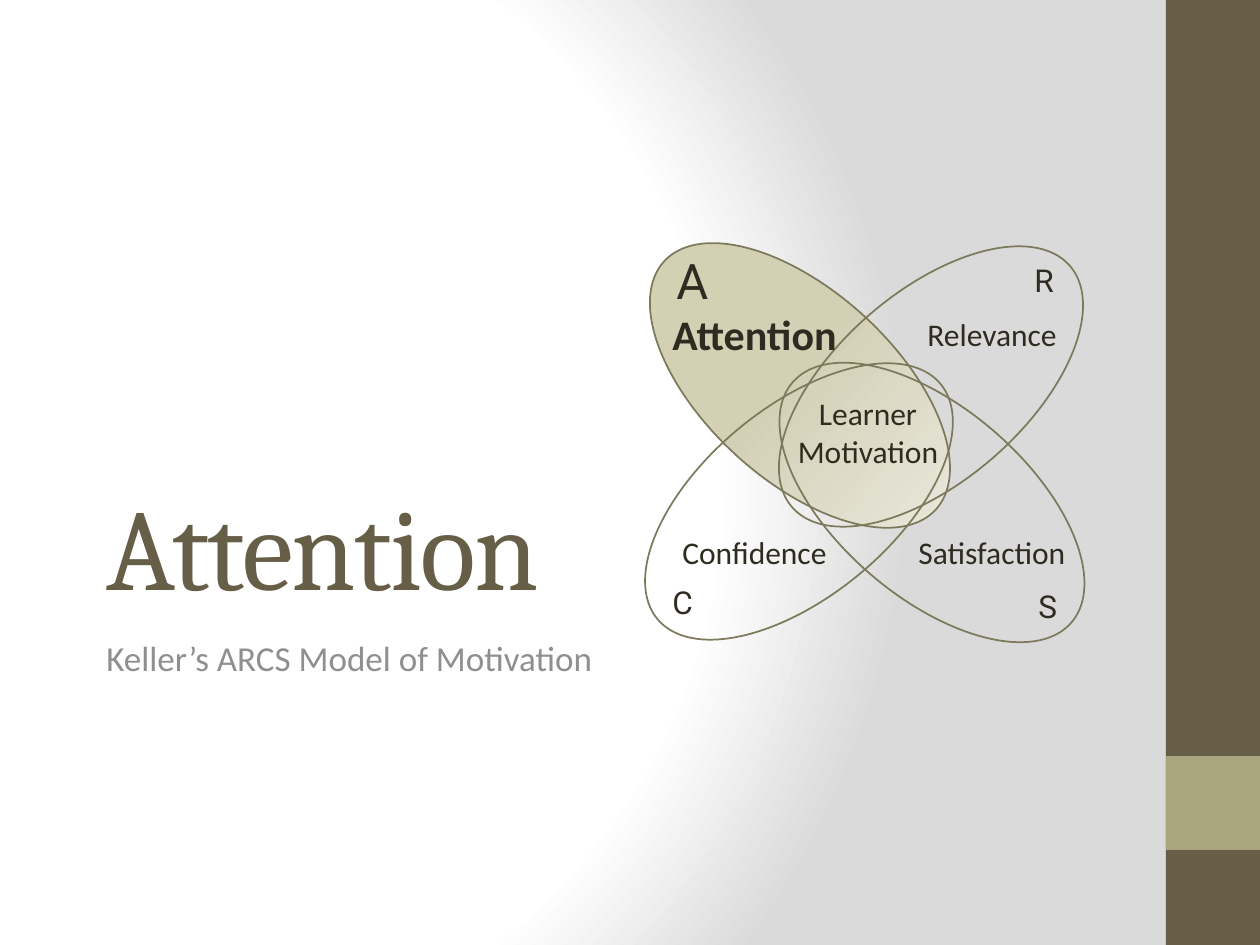
from typing import NamedTuple

from lxml.etree import SubElement
from pptx import Presentation
from pptx.dml.color import RGBColor
from pptx.enum.shapes import MSO_SHAPE
from pptx.enum.text import MSO_ANCHOR, MSO_AUTO_SIZE, PP_ALIGN
from pptx.oxml.ns import qn
from pptx.util import Emu, Pt

PX_PER_INCH = 126
BROWN, OLIVE, OUTLINE = "675E47", "A9A57C", "7D7A5C"
INK, GRAY = "2F2B20", "8F8F8D"
PETAL_WIDTH, PETAL_HEIGHT = 368, 189


class Petal(NamedTuple):
    left: int
    top: int
    rotation: float
    highlighted: bool = False


class Label(NamedTuple):
    text: str
    left: int
    top: int
    width: int
    height: int
    size: int = 18
    font: str = "Calibri"
    color: str = INK
    bold: bool = False
    align: PP_ALIGN = PP_ALIGN.LEFT
    wrap: bool = False
    anchor: MSO_ANCHOR = MSO_ANCHOR.TOP


PETALS = [
    Petal(616, 291, 42.4, highlighted=True),
    Petal(748, 408, 40.7),
    Petal(747, 292, 319),
    Petal(615, 407, 320.3),
]

TITLE = Label("Attention", 94, 262, 1040, 358, 66, "Cambria", BROWN,
              wrap=True, anchor=MSO_ANCHOR.BOTTOM)
SUBTITLE = Label("Keller’s ARCS Model of Motivation", 94, 630, 891, 147, 20,
                 color=GRAY, wrap=True)

DIAGRAM_LABELS = [
    Label("A", 664, 244, 63, 66, 28, "Roboto"),
    Label("Attention", 660, 302, 193, 63, 24, bold=True),
    Label("R", 1022, 255, 47, 50, font="Roboto"),
    Label("Relevance", 915, 309, 156, 50),
    Label("C", 660, 577, 45, 50, font="Roboto"),
    Label("Confidence", 670, 527, 171, 50),
    Label("Satisfaction", 906, 527, 174, 50),
    Label("S", 1026, 581, 44, 50, font="Roboto"),
    Label("Learner\nMotivation", 784, 388, 168, 89, align=PP_ALIGN.CENTER),
]


def px(value: int) -> Emu:
    return Emu(round(value * 914400 / PX_PER_INCH))


def rgb(color: str) -> RGBColor:
    return RGBColor.from_string(color)


def reset_gradient(root, stops: list[tuple[int, str]]):
    """Replace the gradient's stops and direction, and return the gradient."""
    gradient = root.find(".//" + qn("a:gradFill"))
    for child in list(gradient):
        gradient.remove(child)
    stop_list = SubElement(gradient, qn("a:gsLst"))
    for percent, color in stops:
        stop = SubElement(stop_list, qn("a:gs"), pos=str(percent * 1000))
        SubElement(stop, qn("a:srgbClr"), val=color)
    return gradient


def paint_background(slide) -> None:
    slide.background.fill.gradient()
    gradient = reset_gradient(
        slide.element, [(0, "FFFFFF"), (75, "FFFFFF"), (100, "DADADA")])
    circle = SubElement(gradient, qn("a:path"))
    circle.set("path", "circle")
    SubElement(circle, qn("a:fillToRect"), l="20000", t="50000", r="100000", b="50000")


def add_bar(slide, left: int, top: int, width: int, height: int, color: str) -> None:
    shape = slide.shapes.add_shape(
        MSO_SHAPE.RECTANGLE, px(left), px(top), px(width), px(height))
    shape.shadow.inherit = False
    shape.fill.solid()
    shape.fill.fore_color.rgb = rgb(color)
    shape.line.fill.background()


def add_petal(slide, petal: Petal) -> None:
    shape = slide.shapes.add_shape(
        MSO_SHAPE.OVAL, px(petal.left), px(petal.top), px(PETAL_WIDTH), px(PETAL_HEIGHT))
    shape.rotation = petal.rotation
    shape.shadow.inherit = False
    shape.line.color.rgb = rgb(OUTLINE)
    shape.line.width = Pt(1)
    if petal.highlighted:
        shape.fill.gradient()
        gradient = reset_gradient(
            shape.element, [(0, "D2CFB1"), (47, "D3D0B6"), (100, "F0EFE7")])
        SubElement(gradient, qn("a:lin"), ang="0", scaled="0")
    else:
        shape.fill.background()


def add_label(slide, label: Label):
    box = slide.shapes.add_textbox(
        px(label.left), px(label.top), px(label.width), px(label.height))
    frame = box.text_frame
    frame.word_wrap = label.wrap
    frame.auto_size = MSO_AUTO_SIZE.NONE if label.wrap else MSO_AUTO_SIZE.SHAPE_TO_FIT_TEXT
    frame.vertical_anchor = label.anchor
    frame.text = label.text
    for paragraph in frame.paragraphs:
        paragraph.alignment = label.align
        paragraph.font.name = label.font
        paragraph.font.size = Pt(label.size)
        paragraph.font.bold = label.bold
        paragraph.font.color.rgb = rgb(label.color)
    return box


def main() -> None:
    presentation = Presentation()
    presentation.slide_width = px(1260)
    presentation.slide_height = px(945)
    slide = presentation.slides.add_slide(presentation.slide_layouts[6])

    # Background and side bar
    paint_background(slide)
    add_bar(slide, 1166, 0, 94, 945, BROWN)
    add_bar(slide, 1166, 756, 94, 94, OLIVE)

    # Title, slightly tightened, and subtitle
    title = add_label(slide, TITLE)
    title_run = title.text_frame.paragraphs[0].runs[0]
    title_run.font._element.set("spc", "-100")
    add_label(slide, SUBTITLE)

    # Overlapping petals with their labels
    for petal in PETALS:
        add_petal(slide, petal)
    for label in DIAGRAM_LABELS:
        add_label(slide, label)

    presentation.save("out.pptx")


if __name__ == "__main__":
    main()
